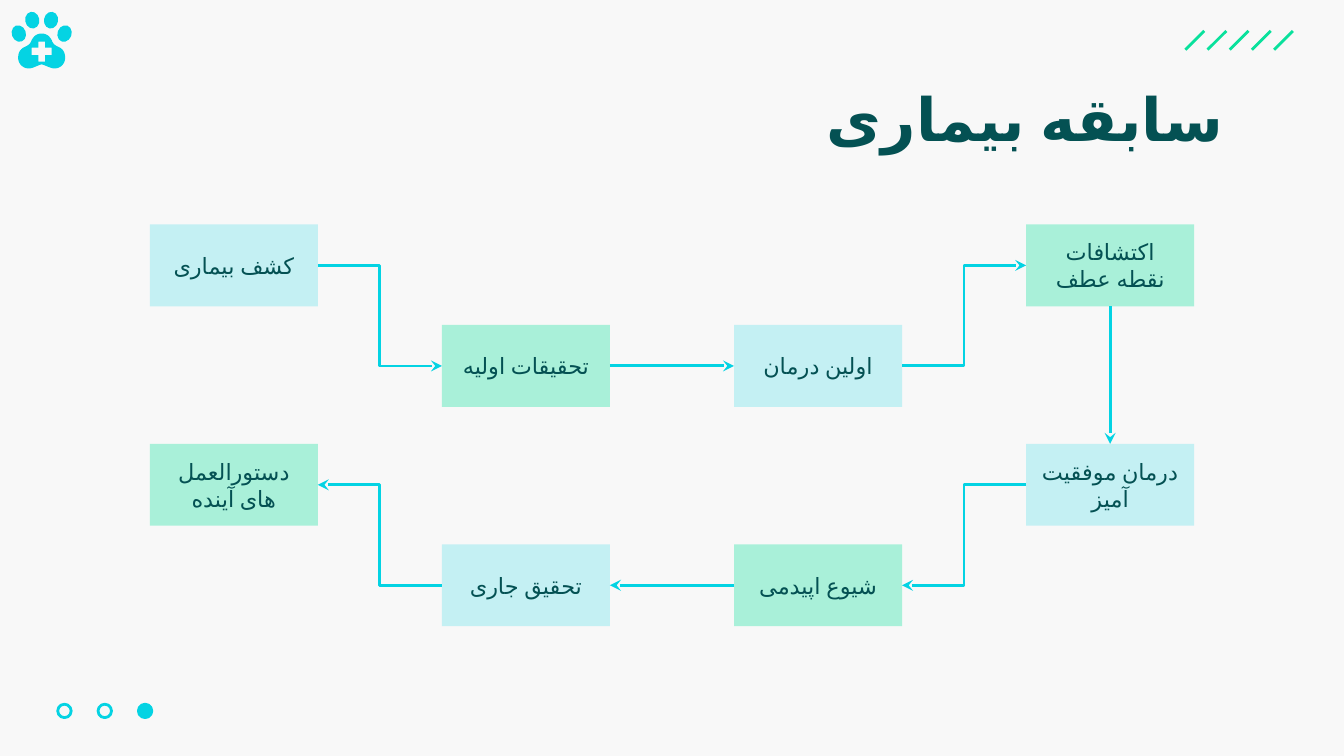
from dataclasses import dataclass
from itertools import pairwise

from lxml.etree import SubElement
from pptx import Presentation
from pptx.dml.color import RGBColor
from pptx.enum.lang import MSO_LANGUAGE_ID
from pptx.enum.shapes import MSO_CONNECTOR, MSO_SHAPE
from pptx.enum.text import MSO_ANCHOR, PP_ALIGN
from pptx.oxml.ns import qn
from pptx.util import Inches, Pt


@dataclass(frozen=True)
class Theme:
    back: str = "F8F8F8"
    ink: str = "045153"
    cyan: str = "04D3E3"
    green: str = "09E19C"
    cyan_alpha: int = 21
    green_alpha: int = 33
    head: str = "Roboto"
    body: str = "Lato"
    big: int = 32
    small: int = 12
    stroke: float = 1.5


THEME = Theme()
WIDE = 10
HIGH = WIDE * 9 / 16
TOP, LEFT, BOTTOM, RIGHT = range(4)

# Label, column and row of each step, in reading order
STEPS = [
    ("کشف بیماری", 0, 0), ("تحقیقات اولیه", 1, 1),
    ("اولین درمان", 2, 1), ("اکتشافات نقطه عطف", 3, 0),
    ("درمان موفقیت آمیز", 3, 2), ("شیوع اپیدمی", 2, 3),
    ("تحقیق جاری", 1, 3), ("دستورالعمل های آینده", 0, 2),
]


def color(code):
    return RGBColor.from_string(code)


def place(*lengths):
    return [Inches(length) for length in lengths]


def paint(shape, fill=None, line=None, alpha=None):
    shape.shadow.inherit = False
    if fill:
        shape.fill.solid()
        shape.fill.fore_color.rgb = color(fill)
    else:
        shape.fill.background()
    if alpha:
        tint = shape.fill._xPr.find(qn("a:solidFill"))[0]
        SubElement(tint, qn("a:alpha"), val=str(alpha * 1000))
    if line:
        shape.line.color.rgb = color(line)
        shape.line.width = Pt(THEME.stroke)
    else:
        shape.line.fill.background()


def write(shape, text, font, size, align, anchor, bold=False):
    """Set one right-to-left paragraph with even insets."""
    frame = shape.text_frame
    frame.word_wrap = True
    frame.vertical_anchor = anchor
    frame.margin_left = frame.margin_right = Inches(0.1)
    frame.margin_top = frame.margin_bottom = Inches(0.1)
    para = frame.paragraphs[0]
    para.alignment = align
    para._p.get_or_add_pPr().set("rtl", "1")
    run = para.add_run()
    run.text = text
    run.font.name, run.font.size, run.font.bold = font, Pt(size), bold
    run.font.language_id = MSO_LANGUAGE_ID.FARSI
    run.font.color.rgb = color(THEME.ink)
    for script in ("a:ea", "a:cs"):
        SubElement(run._r.get_or_add_rPr(), qn(script), typeface=font)


def link(slide, kind, start, end, tint, arrow=False):
    line = slide.shapes.add_connector(kind, *place(*start, *end))
    line.line.color.rgb = color(tint)
    line.line.width = Pt(THEME.stroke)
    if arrow:
        SubElement(line.line._get_or_add_ln(), qn("a:tailEnd"), type="stealth")
    SubElement(line._element.spPr, qn("a:effectLst"))
    return line


def slashes(slide, left, top, width, height, count=5):
    size = height
    pitch = (width - size) / (count - 1)
    for i in range(count):
        x = left + i * pitch
        link(slide, MSO_CONNECTOR.STRAIGHT, (x, top + height),
             (x + size, top), THEME.green)


def dots(slide, left, top, width, height, count=3):
    """Draw the page marks; the last one is filled."""
    pitch = (width - height) / (count - 1)
    for i in range(count):
        dot = slide.shapes.add_shape(
            MSO_SHAPE.OVAL, *place(left + i * pitch, top, height, height))
        paint(dot, THEME.cyan if i == count - 1 else None, THEME.cyan)


def curve(points, steps=12):
    """Sample a chain of cubic curves that share their end points."""
    found = [points[0]]
    for i in range(0, len(points) - 1, 3):
        knots = points[i:i + 4]
        for step in range(1, steps + 1):
            t = step / steps
            share = ((1 - t) ** 3, 3 * t * (1 - t) ** 2,
                     3 * t * t * (1 - t), t ** 3)
            found.append(tuple(sum(s * k[axis] for s, k in zip(share, knots))
                               for axis in (0, 1)))
    return found


def paw(slide, left, top, width, height):
    """Draw the paw on a grid of 46 by 42 units, mirrored about its middle."""
    unit_x, unit_y, mid = width / 46, height / 42, 23

    def spot(point):
        return tuple(place(left + (mid + point[0]) * unit_x,
                           top + point[1] * unit_y))

    def mirror(half):
        return half + [(-x, y) for x, y in reversed(half)]

    for x, y, turn in ((-17, 16, -20), (-7, 6, -10),
                       (7, 6, 10), (17, 16, 20)):
        toe = slide.shapes.add_shape(
            MSO_SHAPE.OVAL, *spot((x - 5.25, y - 6.25)),
            *place(10.5 * unit_x, 12.5 * unit_y))
        toe.rotation = turn
        paint(toe, THEME.cyan)

    pad = mirror(curve([
        (0, 16), (2.5, 16), (5.5, 17), (7.5, 21), (8.5, 24), (10.5, 25),
        (12.5, 26), (15.5, 27), (17.5, 30), (17.5, 34), (17.5, 38),
        (14.5, 42), (9.5, 42), (6.5, 42), (1.5, 39), (0, 39)]))
    cross = mirror([(2.5, 22), (2.5, 26.5), (7.5, 26.5),
                    (7.5, 32), (2.5, 32), (2.5, 37)])
    pen = slide.shapes.build_freeform(*spot(pad[0]))
    pen.add_line_segments([spot(p) for p in pad[1:]], close=True)
    pen.move_to(*spot(cross[0]))
    pen.add_line_segments([spot(p) for p in cross[1:]], close=True)
    paint(pen.convert_to_shape(), THEME.cyan)


def title(slide, left, top, width, height):
    box = slide.shapes.add_textbox(*place(left, top, width, height))
    write(box, "سابقه بیماری", THEME.head, THEME.big,
          PP_ALIGN.RIGHT, MSO_ANCHOR.TOP, bold=True)


def flow(slide, left, top, width, height):
    """Lay the steps in two lanes, each with a raised and a lowered row."""
    wide, high = 1.25, 0.61
    pitch = (width - wide) / 3
    drop = 0.25 * height
    lane = height - high - drop
    cards = []
    for i, (text, col, row) in enumerate(STEPS):
        y = top + row // 2 * lane + row % 2 * drop
        card = slide.shapes.add_shape(
            MSO_SHAPE.RECTANGLE, *place(left + col * pitch, y, wide, high))
        if i % 2:
            paint(card, THEME.green, alpha=THEME.green_alpha)
        else:
            paint(card, THEME.cyan, alpha=THEME.cyan_alpha)
        write(card, text, THEME.body, THEME.small,
              PP_ALIGN.CENTER, MSO_ANCHOR.MIDDLE)
        cards.append((card, col, row))

    for (old, col, row), (new, to_col, to_row) in pairwise(cards):
        if col == to_col:
            sides = BOTTOM, TOP
        else:
            sides = (RIGHT, LEFT) if to_col > col else (LEFT, RIGHT)
        level = col == to_col or row == to_row
        kind = MSO_CONNECTOR.STRAIGHT if level else MSO_CONNECTOR.ELBOW
        line = link(slide, kind, (0, 0), (0, 0), THEME.cyan, arrow=True)
        line.begin_connect(old, sides[0])
        line.end_connect(new, sides[1])


def main():
    deck = Presentation()
    deck.slide_width, deck.slide_height = place(WIDE, HIGH)
    slide = deck.slides.add_slide(deck.slide_layouts[6])
    slide.background.fill.solid()
    slide.background.fill.fore_color.rgb = color(THEME.back)
    slashes(slide, 8.82, 0.23, 0.8, 0.14)
    dots(slide, 0.43, 5.24, 0.7, 0.1)
    paw(slide, 0.08, 0.09, 0.46, 0.42)
    title(slide, 0.8, 0.51, WIDE - 1.6, 0.61)
    flow(slide, (WIDE - 7.77) / 2, 1.67, 7.77, 2.99)
    deck.save("out.pptx")


if __name__ == "__main__":
    main()
